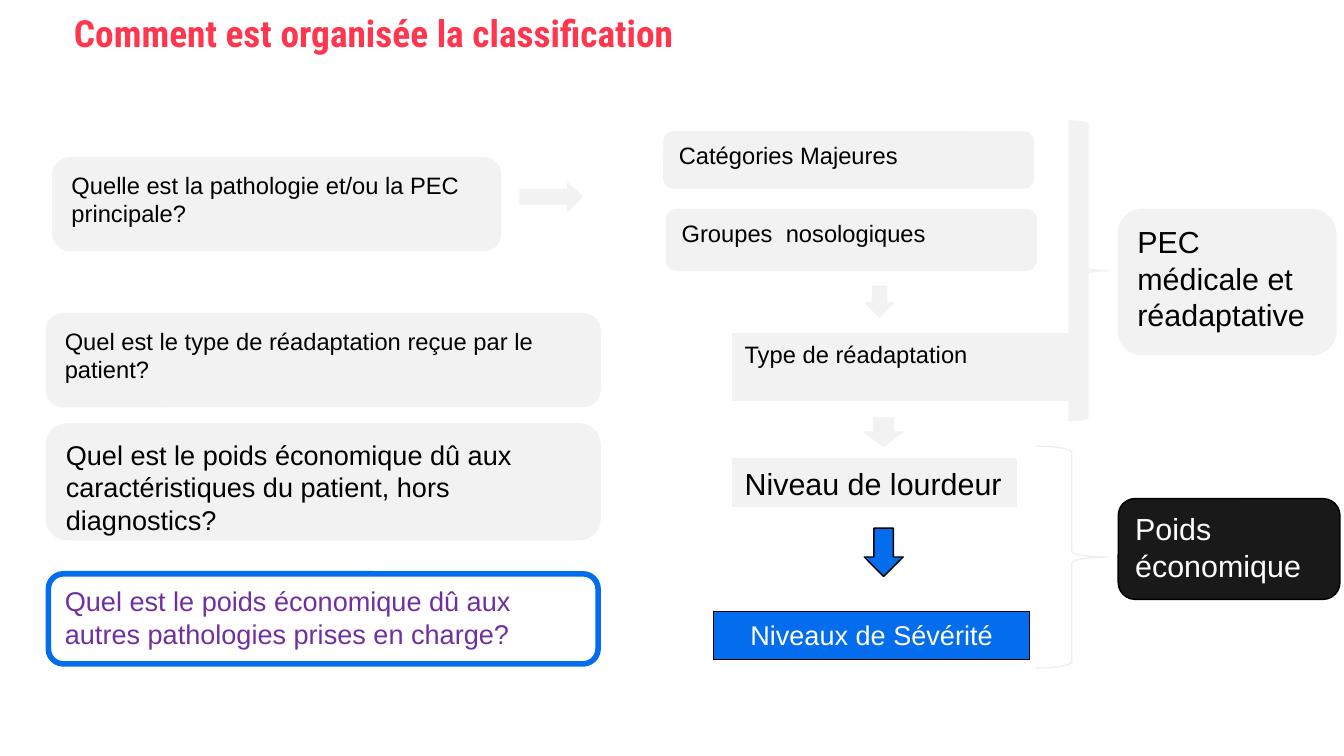
from dataclasses import dataclass

from pptx import Presentation
from pptx import util as u
from pptx.dml.color import RGBColor
from pptx.enum import shapes, text

# A 16:9 slide on a square grid of 100 columns, each a tenth of an inch
WIDTH = u.Inches(10)
HEIGHT = WIDTH * 9 // 16
COLUMN = ROW = WIDTH / 100
SHAPE = shapes.MSO_SHAPE


@dataclass(frozen=True)
class Theme:
    title: str = "FF364D"
    pale: str = "F2F2F2"
    brace: str = "ECF0F1"
    accent: str = "036DED"
    dark: str = "191919"
    black: str = "000000"
    white: str = "FFFFFF"
    purple: str = "7030A0"
    title_font: str = "Roboto Condensed"
    body_font: str = "Arial"
    title_size: float = 20
    small: float = 12.7
    medium: float = 14.5
    large: float = 16.3
    thin: float = 0.75
    thick: float = 3


THEME = Theme()


def set_values(target, values):
    for name, value in values.items():
        setattr(target, name, value)


def grid_area(left, top, width, height):
    return [round(n) for n in (left * COLUMN, top * ROW, width * COLUMN, height * ROW)]


def write(shape, words, size, color, font=THEME.body_font, bold=False,
          align=text.PP_ALIGN.LEFT, inset=0.09):
    """Fill a shape with one formatted paragraph, starting at its top."""
    frame = shape.text_frame
    margins = {"margin_left": u.Inches(inset), "margin_right": u.Inches(inset),
               "margin_top": u.Inches(0.05), "margin_bottom": u.Inches(0.05)}
    set_values(frame, {"word_wrap": True, "auto_size": text.MSO_AUTO_SIZE.NONE,
                       "vertical_anchor": text.MSO_ANCHOR.TOP, **margins})
    paragraph = frame.paragraphs[0]
    paragraph.alignment = align
    run = paragraph.add_run()
    run.text = words
    set_values(run.font, {"name": font, "size": u.Pt(size), "bold": bold})
    run.font.color.rgb = RGBColor.from_string(color)
    return paragraph


def add_title(slide, words):
    title = slide.shapes.title
    area = grid_area(4.5, -0.8, 96.1, 5)
    set_values(title, dict(zip(("left", "top", "width", "height"), area)))
    paragraph = write(title, words, THEME.title_size, THEME.title,
                      THEME.title_font, bold=True, inset=0.1)
    paragraph.line_spacing = u.Pt(31.8)


def add_figure(slide, kind, area, fill=THEME.pale, line=THEME.pale,
               weight=THEME.thin, rotation=0):
    """Add a flat preset shape; fill None leaves it open."""
    shape = slide.shapes.add_shape(kind, *grid_area(*area))
    shape.shadow.inherit = False
    shape.rotation = rotation
    if fill:
        shape.fill.solid()
        shape.fill.fore_color.rgb = RGBColor.from_string(fill)
    else:
        shape.fill.background()
    shape.line.color.rgb = RGBColor.from_string(line)
    shape.line.width = u.Pt(weight)
    return shape


def add_box(slide, kind, area, words, size, color=THEME.black,
            align=text.PP_ALIGN.LEFT, **style):
    write(add_figure(slide, kind, area, **style), words, size, color, align=align)


def add_questions(slide):
    pale = {"weight": THEME.thick}
    active = {"weight": THEME.thick, "fill": None, "line": THEME.accent,
              "color": THEME.purple}
    questions = [
        ((4.1, 11.9, 33, 6.6), THEME.small, pale,
         "Quelle est la pathologie et/ou la PEC principale?"),
        ((3.6, 23.5, 40.9, 6.6), THEME.small, pale,
         "Quel est le type de réadaptation reçue par le patient?"),
        ((3.6, 31.7, 40.9, 8.3), THEME.medium, pale,
         "Quel est le poids économique dû aux caractéristiques du patient, hors diagnostics?"),
        ((3.6, 42.7, 40.9, 6.7), THEME.medium, active,
         "Quel est le poids économique dû aux autres pathologies prises en charge?"),
    ]
    for area, size, style, words in questions:
        add_box(slide, SHAPE.ROUNDED_RECTANGLE, area, words, size, **style)


def add_levels(slide):
    severity = {"fill": THEME.accent, "line": THEME.black, "color": THEME.white,
                "align": text.PP_ALIGN.CENTER}
    levels = [
        (SHAPE.ROUNDED_RECTANGLE, (49.4, 9.8, 27.5, 4.2), "Catégories Majeures",
         THEME.small, {}),
        (SHAPE.ROUNDED_RECTANGLE, (49.6, 15.6, 27.5, 4.5), "Groupes  nosologiques",
         THEME.small, {}),
        (SHAPE.RECTANGLE, (54.5, 24.8, 25.4, 5), "Type de réadaptation",
         THEME.small, {}),
        (SHAPE.RECTANGLE, (54.5, 34.1, 21.1, 3.6), "Niveau de lourdeur",
         THEME.large, {}),
        (SHAPE.RECTANGLE, (53.1, 45.5, 23.5, 3.6), "Niveaux de Sévérité",
         THEME.medium, severity),
    ]
    for kind, area, words, size, style in levels:
        add_box(slide, kind, area, words, size, **style)


def add_arrows(slide):
    add_figure(slide, SHAPE.RIGHT_ARROW, (38.7, 13.6, 4.6, 2.1))
    add_figure(slide, SHAPE.RIGHT_ARROW, (64.3, 21.4, 2.3, 2.1), rotation=90)
    add_figure(slide, SHAPE.DOWN_ARROW, (64.3, 31.1, 2.9, 2.1))
    add_figure(slide, SHAPE.DOWN_ARROW, (64.3, 39.3, 2.9, 3.6),
               fill=THEME.accent, line=THEME.black)


def add_summaries(slide):
    add_figure(slide, SHAPE.RIGHT_BRACE, (79.5, 9, 2.9, 22.3))
    add_figure(slide, SHAPE.RIGHT_BRACE, (77.1, 33.2, 5.3, 16.5),
               fill=None, line=THEME.brace)
    add_box(slide, SHAPE.ROUNDED_RECTANGLE, (83.2, 15.6, 16.2, 10.8),
            "PEC médicale et réadaptative", THEME.large)
    add_box(slide, SHAPE.ROUNDED_RECTANGLE, (83.2, 37.1, 16.5, 7.5),
            "Poids économique", THEME.large, THEME.white,
            fill=THEME.dark, line=THEME.black)


def main():
    presentation = Presentation()
    set_values(presentation, {"slide_width": WIDTH, "slide_height": HEIGHT})
    slide = presentation.slides.add_slide(presentation.slide_layouts[5])

    add_title(slide, "Comment est organisée la classification")
    # Questions on the left, levels of the classification in the middle
    add_questions(slide)
    add_levels(slide)
    add_arrows(slide)
    # Braces group the levels under two summaries on the right
    add_summaries(slide)

    presentation.save("out.pptx")


if __name__ == "__main__":
    main()
